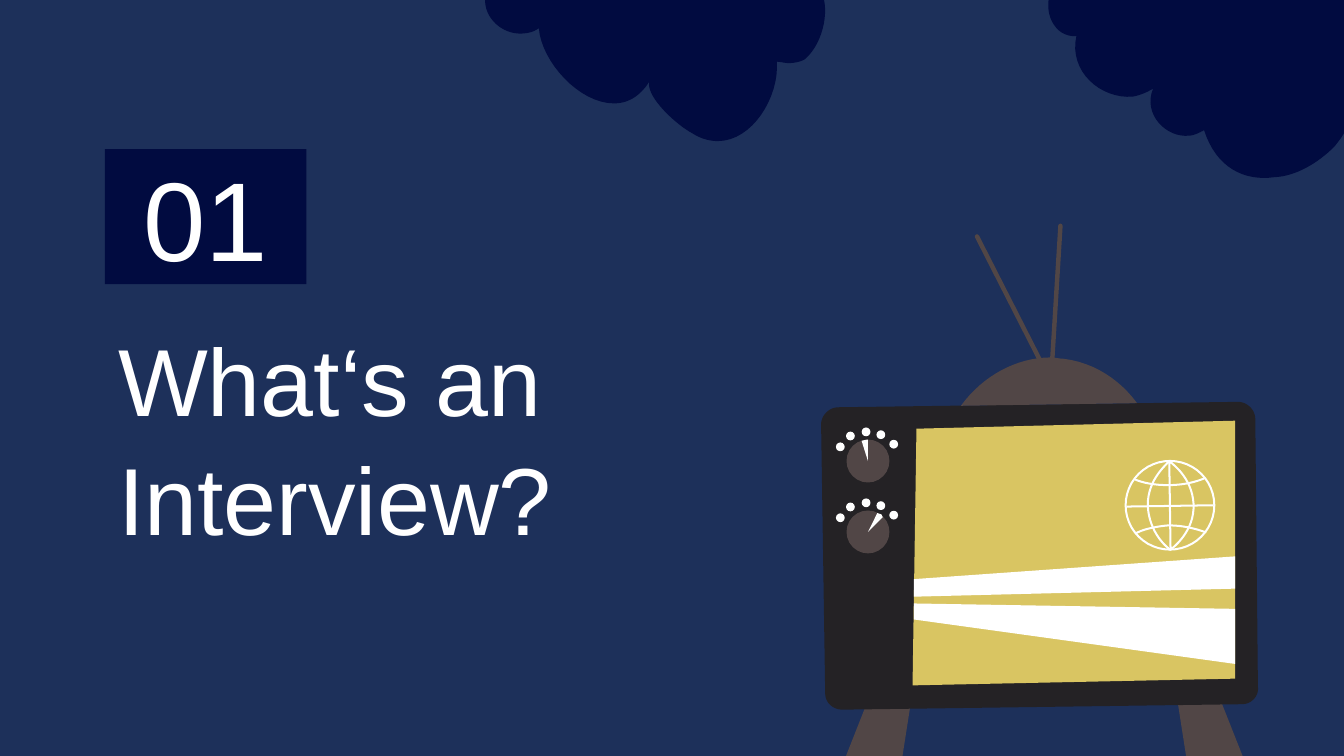
"""Build a section slide with a television set beneath dark clouds."""
from dataclasses import dataclass
from typing import Optional

from lxml import etree
from pptx import Presentation
from pptx import util as u
from pptx.dml.color import RGBColor
from pptx.enum import shapes, text
from pptx.oxml import ns

SKY = RGBColor(0x1D, 0x30, 0x5A)
NAVY = RGBColor(0x01, 0x0B, 0x40)
BROWN = RGBColor(0x51, 0x46, 0x46)
CHARCOAL = RGBColor(0x24, 0x22, 0x25)
MUSTARD = RGBColor(0xD9, 0xC5, 0x62)
WHITE = RGBColor(0xFF, 0xFF, 0xFF)
FONT = "Arial"
CURVE_STEPS = 16
GLOBE_LINE = 1.08


@dataclass(frozen=True)
class Outline:
    """A run of points: pairs are corners, sextuples are cubic curves."""
    segments: tuple
    fill: Optional[RGBColor] = None
    line: Optional[RGBColor] = None
    width: float = 0


@dataclass(frozen=True)
class Dial:
    """A round knob with a pointer given relative to its centre."""
    x: float
    y: float
    pointer: tuple


CLOUDS = (
    Outline(((682.6, 95), (694, 94.5, 705.6, 87.8, 715, 78.5),
             (733.7, 56.2, 735.1, 22.3, 727.2, -4.3), (563, -4.3),
             (558.7, 5.8, 564.5, 20.2, 576.7, 19.4),
             (572.4, 38.2, 589.7, 53.3, 607, 51.8),
             (610.6, 51.1, 614.2, 49.7, 617.8, 47.5),
             (612, 61.2, 625, 74.2, 637.2, 72.7),
             (639.4, 72.7, 642.2, 71.3, 645.1, 69.8),
             (651.6, 90, 666.7, 97.2, 682.6, 95)), NAVY),
    Outline(((384.5, 75.6), (380.2, 75.6, 375.1, 74.2, 370.8, 71.3),
             (363.6, 67.7, 346.3, 52.6, 347.8, 43.9),
             (342.7, 51.8, 336.2, 55.4, 329, 55.4),
             (310.3, 55.4, 290.2, 33.1, 288.7, 15.1),
             (285.8, 17.3, 282.2, 18, 278.6, 18),
             (269.3, 18, 259.2, 10.1, 259.9, -1.4), (438.5, -7.2),
             (445.7, 2.9, 441.4, 23, 431.3, 31.7),
             (429.1, 33.1, 425.5, 33.8, 422.6, 33.8),
             (420.5, 33.8, 418.3, 33.1, 416.2, 33.1),
             (417.6, 51.8, 403.2, 75.6, 384.5, 75.6)), NAVY),
)
CABINET = (
    Outline(((568.1, 121), (563, 204.5), (523.4, 126.7)), None, BROWN, 2.37),
    Outline(((650.2, 365.8), (666.7, 407.5), (635.8, 407.5), (629.3, 365.8)), BROWN),
    Outline(((489.6, 365.8), (483.1, 407.5), (452.2, 407.5), (468.7, 365.8)), BROWN),
    Outline(((663.1, 215.3), (668.2, 215.3, 672.5, 219.6, 672.5, 224.6), (673.9, 367.9),
             (674.6, 373, 670.3, 377.3, 665.3, 377.3), (451.4, 380.2),
             (446.4, 380.2, 442.1, 376.6, 442.1, 371.5), (439.9, 227.5),
             (439.9, 222.5, 444.2, 218.2, 449.3, 218.2)), CHARCOAL),
)
DIALS = (
    Dial(465, 247, ((0, -11.5), (0, 0), (-3.4, -10.8), (-1.4, -11.3))),
    Dial(465, 285, ((5, -10.1), (7.2, -9.4), (7.9, -7.9), (0, 0))),
)
DIAL_DOTS = ((-14.8, -7.6), (-9.4, -13.4), (-1, -15.6), (6.9, -14.1), (13.8, -9))
DIAL_SIZE = 23
DOT_SIZE = 4.7
SCREEN = Outline(((661.7, 225.4), (661.7, 363.6), (488.9, 367.2), (491, 229.7)), MUSTARD)
GLOBE_CENTRE = (626.8, 270.7)
GLOBE_SIZE = 47.5
GLOBE_ARCS = (
    ((645.1, 256.3), (641.5, 257.8, 635, 259.9, 625.7, 259.9),
     (617.8, 259.9, 612, 258.5, 608.4, 257)),
    ((645.8, 285.1), (641.5, 283.7, 635, 281.5, 625.7, 281.5),
     (618.5, 282.2, 612, 283.7, 608.4, 285.8)),
    ((626.4, 247), (627.1, 294.5), (627.8, 293.8, 640.1, 285.1, 639.4, 270),
     (638.6, 255.6, 627.8, 248.4, 626.4, 247)),
    ((626.4, 247), (625.7, 248.4, 614.9, 256.3, 614.9, 270.7),
     (615.6, 285.8, 625.7, 293.8, 627.1, 294.5)),
)
FRONT = (
    Outline(((661.7, 298.1), (661.7, 315.4), (489.6, 319.7), (489.6, 310.3)), WHITE),
    Outline(((489.6, 323.3), (661.7, 326.2), (661.7, 355.7), (489.6, 331.9)), WHITE),
    Outline(((563, 191.5), (565.2, 191.5, 567.4, 192.2, 569.5, 192.2),
             (594, 195.1, 607, 213.1, 609.1, 216), (514.8, 217.4),
             (526.3, 201.6, 544.3, 191.5, 563, 191.5)), BROWN),
)


def paint(shape, fill: Optional[RGBColor], line: Optional[RGBColor] = None,
          width: float = 0) -> None:
    shape.shadow.inherit = False
    if fill is None:
        shape.fill.background()
    else:
        shape.fill.solid()
        shape.fill.fore_color.rgb = fill
    if line is None:
        shape.line.fill.background()
    else:
        shape.line.color.rgb = line
        shape.line.width = u.Pt(width)
        shape.element.spPr.find(ns.qn("a:ln")).set("cap", "rnd")


def flatten(segments: tuple) -> list[tuple[float, float]]:
    points = [segments[0]]
    for segment in segments[1:]:
        if len(segment) == 2:
            points.append(segment)
            continue
        controls = (points[-1], segment[:2], segment[2:4], segment[4:])
        for step in range(1, CURVE_STEPS + 1):
            t = step / CURVE_STEPS
            weights = ((1 - t) ** 3, 3 * t * (1 - t) ** 2, 3 * t * t * (1 - t), t ** 3)
            points.append(tuple(sum(weight * control[axis] for weight, control
                                    in zip(weights, controls)) for axis in (0, 1)))
    return points


def draw_outline(canvas, outline: Outline) -> None:
    start, *rest = [(u.Pt(x), u.Pt(y)) for x, y in flatten(outline.segments)]
    builder = canvas.build_freeform(*start)
    builder.add_line_segments(rest, close=outline.fill is not None)
    paint(builder.convert_to_shape(), outline.fill, outline.line, outline.width)


def draw_circle(canvas, x: float, y: float, size: float, fill: Optional[RGBColor],
                line: Optional[RGBColor] = None, width: float = 0) -> None:
    shape = canvas.add_shape(shapes.MSO_SHAPE.OVAL, u.Pt(x - size / 2), u.Pt(y - size / 2),
                             u.Pt(size), u.Pt(size))
    paint(shape, fill, line, width)


def draw_dial(canvas, dial: Dial) -> None:
    draw_circle(canvas, dial.x, dial.y, DIAL_SIZE, BROWN)
    pointer = tuple((dial.x + x, dial.y + y) for x, y in dial.pointer)
    draw_outline(canvas, Outline(pointer, WHITE))
    for x, y in DIAL_DOTS:
        draw_circle(canvas, dial.x + x, dial.y + y, DOT_SIZE, WHITE)


def draw_globe(canvas) -> None:
    x, y = GLOBE_CENTRE
    draw_circle(canvas, x, y, GLOBE_SIZE, None, WHITE, GLOBE_LINE)
    equator = canvas.add_connector(shapes.MSO_CONNECTOR.STRAIGHT, u.Pt(650.2), u.Pt(270.7),
                                   u.Pt(603.4), u.Pt(271.4))
    equator.line.color.rgb = WHITE
    equator.line.width = u.Pt(GLOBE_LINE)
    etree.SubElement(equator.element.spPr, ns.qn("a:effectLst"))
    for arc in GLOBE_ARCS:
        draw_outline(canvas, Outline(arc, None, WHITE, GLOBE_LINE))


def write(shape, words: str, size: float, alignment, anchor):
    frame = shape.text_frame
    frame.word_wrap = True
    frame.vertical_anchor = anchor
    frame.margin_left = frame.margin_right = u.Pt(7.2)
    frame.margin_top = frame.margin_bottom = u.Pt(7.2)
    paragraph = frame.paragraphs[0]
    paragraph.text = words
    paragraph.alignment = alignment
    paragraph.font.name = FONT
    paragraph.font.size = u.Pt(size)
    paragraph.font.color.rgb = WHITE
    return paragraph


def main() -> None:
    presentation = Presentation()
    presentation.slide_width, presentation.slide_height = u.Pt(720), u.Pt(405)
    slide = presentation.slides.add_slide(presentation.slide_layouts[6])
    slide.background.fill.solid()
    slide.background.fill.fore_color.rgb = SKY
    for cloud in CLOUDS:
        draw_outline(slide.shapes, cloud)

    title = slide.shapes.add_textbox(u.Pt(56.2), u.Pt(162.7), u.Pt(333.4), u.Pt(142.6))
    paragraph = write(title, "What‘s an Interview?", 51, text.PP_ALIGN.LEFT,
                      text.MSO_ANCHOR.TOP)
    paragraph.line_spacing = 1.04
    badge = slide.shapes.add_shape(shapes.MSO_SHAPE.RECTANGLE, u.Pt(56.2), u.Pt(79.9),
                                   u.Pt(108), u.Pt(72.4))
    paint(badge, NAVY)
    write(badge, "01", 60, text.PP_ALIGN.CENTER, text.MSO_ANCHOR.MIDDLE)

    television = slide.shapes.add_group_shape().shapes
    for outline in CABINET:
        draw_outline(television, outline)
    for dial in DIALS:
        draw_dial(television, dial)
    draw_outline(television, SCREEN)
    draw_globe(television)
    for outline in FRONT:
        draw_outline(television, outline)
    presentation.save("out.pptx")


if __name__ == "__main__":
    main()
